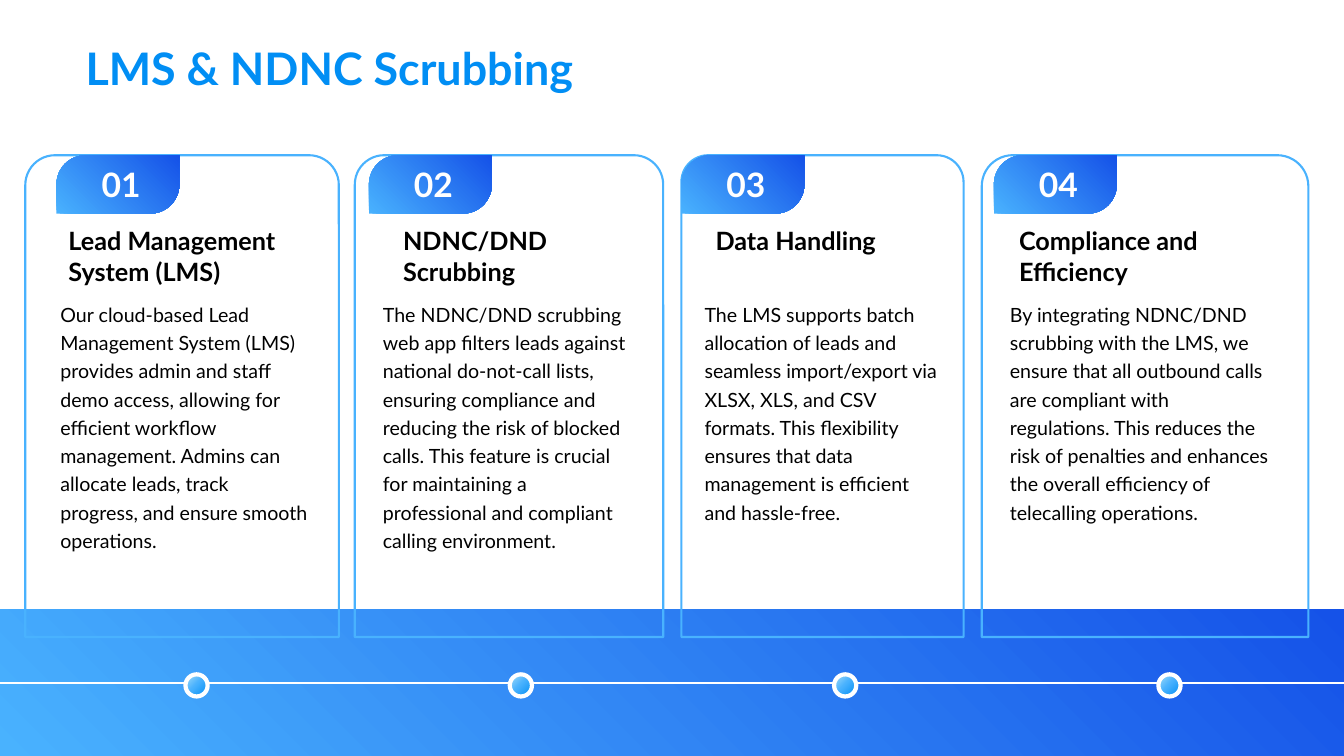
import dataclasses

import lxml.etree
import pptx
import pptx.dml.color
import pptx.enum.shapes
import pptx.enum.text
import pptx.oxml.ns
import pptx.util

SHAPE = pptx.enum.shapes.MSO_SHAPE
ALIGN = pptx.enum.text.PP_ALIGN
WIDTH, HEIGHT = pptx.util.Inches(13.33), pptx.util.Inches(7.5)


@dataclasses.dataclass(frozen=True)
class Theme:
    """Colours, gradients, font and type sizes of the slide."""
    font: str = "Lato"
    title: str = "018EF4"
    outline: str = "49B2FE"
    light: str = "FFFFFF"
    ink: str = "000000"
    deep: tuple = ((0, "49B2FE"), (100, "1552E8"))
    bead: tuple = ((0, "018EF4"), (53, "49B2FE"), (91, "95D7F9"), (100, "95D7F9"))
    title_size: int = 32
    number_size: int = 24
    heading_size: int = 18
    body_size: int = 14
    thin: float = 1.5
    thick: float = 3


@dataclasses.dataclass(frozen=True)
class Card:
    """One topic, with (left, width) spans and heights in percent of the slide."""
    heading: str
    body: str
    frame: tuple
    heading_span: tuple
    body_span: tuple
    heading_height: float = 8.53
    body_height: float = 36.93


THEME = Theme()
CARD_TOP, CARD_HEIGHT = 20.53, 63.73
TAB_LEFT, TAB_STEP, TAB_WIDTH, TAB_HEIGHT = 4.2, 23.25, 9.15, 7.73
BEAD_LEFT, BEAD_STEP = 13.8, 24.13
CARDS = (
    Card("Lead Management System (LMS)",
         "Our cloud-based Lead Management System (LMS) provides admin and staff demo access, "
         "allowing for efficient workflow management. Admins can allocate leads, track progress, "
         "and ensure smooth operations.",
         (1.88, 23.33), (4.35, 19.2), (3.75, 19.95)),
    Card("NDNC/DND Scrubbing",
         "The NDNC/DND scrubbing web app filters leads against national do-not-call lists, "
         "ensuring compliance and reducing the risk of blocked calls. This feature is crucial "
         "for maintaining a professional and compliant calling environment.",
         (26.4, 22.95), (29.25, 17.55), (27.75, 20.25)),
    Card("Data Handling",
         "The LMS supports batch allocation of leads and seamless import/export via XLSX, XLS, "
         "and CSV formats. This flexibility ensures that data management is efficient and "
         "hassle-free.",
         (50.7, 21), (52.5, 18.68), (51.68, 19.2), 4, 32.8),
    Card("Compliance and Efficiency",
         "By integrating NDNC/DND scrubbing with the LMS, we ensure that all outbound calls are "
         "compliant with regulations. This reduces the risk of penalties and enhances the overall "
         "efficiency of telecalling operations.",
         (73.05, 24.3), (75.08, 18.9), (74.4, 21.08)),
)


def place(left, top, width, height):
    """Turn percentages of the slide into lengths."""
    return [int(share * side / 100)
            for share, side in zip((left, top, width, height), (WIDTH, HEIGHT) * 2)]


def colour(value):
    """Return the colour object for a hex value."""
    return pptx.dml.color.RGBColor.from_string(value)


def paint_gradient(shape, stops, angle):
    """Fill a shape with gradient stops along a counter-clockwise angle."""
    shape.fill.gradient()
    shape.fill.gradient_angle = angle
    name = pptx.oxml.ns.qn
    stop_list = shape.fill._xPr.find(".//" + name("a:gsLst"))
    for stop in list(stop_list):
        stop_list.remove(stop)
    for position, value in stops:
        stop = lxml.etree.SubElement(stop_list, name("a:gs"), pos=str(position * 1000))
        lxml.etree.SubElement(stop, name("a:srgbClr"), val=value)


def add_figure(slide, kind, box, *, stops=None, angle=45, line=None,
               line_width=THEME.thin, adjustments=()):
    """Add a preset shape with an optional gradient and outline."""
    shape = slide.shapes.add_shape(kind, *place(*box))
    shape.shadow.inherit = False
    for index, value in enumerate(adjustments):
        shape.adjustments[index] = value
    if stops:
        paint_gradient(shape, stops, angle)
    else:
        shape.fill.background()
    if line:
        shape.line.color.rgb = colour(line)
        shape.line.width = pptx.util.Pt(line_width)
    else:
        shape.line.fill.background()
    return shape


def add_text(slide, text, box, *, size, ink=THEME.ink, bold=False,
             align=ALIGN.LEFT, spacing=None):
    """Add a wrapped text box holding one paragraph."""
    frame = slide.shapes.add_textbox(*place(*box)).text_frame
    frame.word_wrap = True
    frame.auto_size = pptx.enum.text.MSO_AUTO_SIZE.SHAPE_TO_FIT_TEXT
    paragraph = frame.paragraphs[0]
    paragraph.alignment = align
    paragraph.line_spacing = spacing
    run = paragraph.add_run()
    run.text = text
    run.font.name = THEME.font
    run.font.size = pptx.util.Pt(size)
    run.font.bold = bold
    run.font.color.rgb = colour(ink)


def add_card_frame(slide, index, card):
    """Add the outline of a card and its number tab."""
    left, width = card.frame
    add_figure(slide, SHAPE.ROUND_2_SAME_RECTANGLE, (left, CARD_TOP, width, CARD_HEIGHT),
               line=THEME.outline, adjustments=(0.095, 0))
    add_figure(slide, SHAPE.ROUND_2_DIAG_RECTANGLE,
               (TAB_LEFT + index * TAB_STEP, CARD_TOP, TAB_WIDTH, TAB_HEIGHT),
               stops=THEME.deep, adjustments=(0.5, 0))


def add_card_text(slide, index, card):
    """Add the number, heading and body of a card."""
    add_text(slide, f"{index + 1:02}", (TAB_LEFT + 2.25 + index * TAB_STEP, 21.07, 5.1, 5.33),
             size=THEME.number_size, ink=THEME.light, bold=True, align=ALIGN.CENTER)
    left, width = card.heading_span
    add_text(slide, card.heading, (left, 29.2, width, card.heading_height),
             size=THEME.heading_size, bold=True)
    left, width = card.body_span
    add_text(slide, card.body, (left, 38.8, width, card.body_height),
             size=THEME.body_size, spacing=1.2)


def add_timeline(slide, band):
    """Add the line across the band and one bead for each card."""
    connector = slide.shapes.add_connector(
        pptx.enum.shapes.MSO_CONNECTOR.STRAIGHT, *place(0, 90.33, 100, 90.33))
    connector.begin_connect(band, 1)
    connector.end_connect(band, 3)
    connector.line.color.rgb = colour(THEME.light)
    connector.line.width = pptx.util.Pt(THEME.thin)
    lxml.etree.SubElement(connector._element.spPr, pptx.oxml.ns.qn("a:effectLst"))
    for index in range(len(CARDS)):
        add_figure(slide, SHAPE.OVAL, (BEAD_LEFT + index * BEAD_STEP, 89.2, 1.65, 2.93),
                   stops=THEME.bead, angle=135, line=THEME.light, line_width=THEME.thick)


def main():
    """Build the slide and save it."""
    presentation = pptx.Presentation()
    presentation.slide_width, presentation.slide_height = WIDTH, HEIGHT
    slide = presentation.slides.add_slide(presentation.slide_layouts[6])
    add_text(slide, "LMS & NDNC Scrubbing", (5.63, 4.8, 80.4, 7.2),
             size=THEME.title_size, ink=THEME.title, bold=True)
    band = add_figure(slide, SHAPE.RECTANGLE, (0, 80.67, 100, 19.33), stops=THEME.deep)
    for index, card in enumerate(CARDS):
        add_card_frame(slide, index, card)
    add_timeline(slide, band)
    for index, card in enumerate(CARDS):
        add_card_text(slide, index, card)
    presentation.save("out.pptx")


if __name__ == "__main__":
    main()
